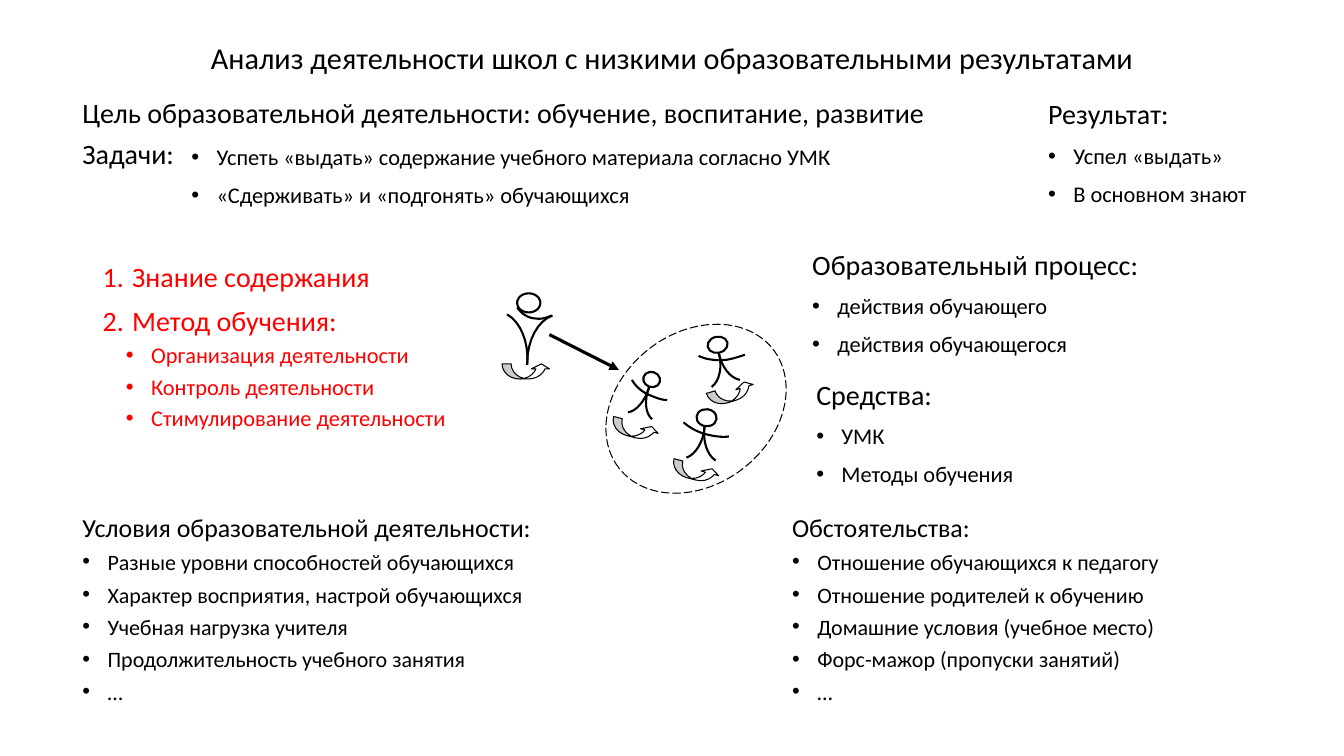
from lxml.etree import SubElement
from pptx import Presentation
from pptx.dml.color import RGBColor
from pptx.enum.dml import MSO_LINE
from pptx.enum.shapes import MSO_CONNECTOR, MSO_SHAPE
from pptx.enum.text import MSO_ANCHOR, MSO_AUTO_SIZE, PP_ALIGN
from pptx.oxml.ns import qn
from pptx.util import Pt

BLACK, WHITE, RED = "000000", "FFFFFF", "FF0000"

# Each figure: head frame and tilt, then arms and legs as Bezier points
FIGURES = [
    ((369.4, 209.5, 16.6, 13.7), 0, [
        [(393.8, 225.4), (391, 226.8), (386.6, 228.2), (383, 227.5),
         (377.3, 227.5), (372.2, 223.9), (369.4, 219.6)],
        [(362.2, 224.6), (371.5, 229.7), (378, 244.1), (376.6, 260.6)],
        [(394.6, 225.4), (384.5, 229), (376.6, 242.6), (376.6, 259.2)]]),
    ((505.4, 240.5, 14.4, 11.5), 347.7, [
        [(532.1, 253.4), (527.8, 254.9), (523.4, 256.3), (519.1, 257),
         (511.9, 257.8), (504.7, 257), (499, 254.2)],
        [(528.5, 271.4), (521.3, 270), (515.5, 262.1), (513.4, 252)],
        [(508.3, 276.5), (514.1, 272.2), (516.2, 262.1), (513.4, 252)]]),
    ((459.4, 265.7, 12.2, 10.8), 18.4, [
        [(476.6, 285.8), (473, 285.8), (469.4, 284.4), (465.8, 283),
         (459.4, 280.8), (454.3, 276.5), (451.4, 271.4)],
        [(465.8, 299.5), (460.8, 295.2), (460.1, 285.8), (463.7, 276.5)],
        [(448.6, 294.5), (454.3, 293.8), (460.8, 286.6), (463.7, 276.5)]]),
    ((497.5, 292.3, 14.4, 12.2), 6.8, [
        [(520.6, 311.8), (516.2, 312.5), (511.9, 311.8), (507.6, 311),
         (499.7, 309.6), (493.2, 306), (488.2, 301.7)],
        [(511.2, 329), (504.7, 324.7), (501.8, 314.6), (503.3, 303.8)],
        [(490.3, 326.9), (496.8, 324.7), (502.6, 315.4), (503.3, 304.6)]]),
]

# Left, top and tilt of the curved arrow at each figure's feet
TURN_ARROWS = [(436.3, 301.7, 14.8), (479.5, 331.9, 14.8),
               (505.4, 275.8, 343.1), (358.6, 259.9, 0)]


def color(value):
    return RGBColor.from_string(value)


def place(shape, left, top, width, height):
    shape.left, shape.top = Pt(left), Pt(top)
    shape.width, shape.height = Pt(width), Pt(height)


def prepare_frame(shape, anchor=MSO_ANCHOR.TOP):
    frame = shape.text_frame
    frame.word_wrap = True
    frame.auto_size = MSO_AUTO_SIZE.NONE
    frame.vertical_anchor = anchor
    return frame


def write(frame, text, *, size=20, fill=BLACK, spacing=0.9, before=10,
          bullet=None, numbered=False, margin=0, hanging=0, level=0,
          align=PP_ALIGN.LEFT):
    """Fill the frame's empty first paragraph, or append a new one."""
    first = not frame.text
    para = frame.paragraphs[0] if first else frame.add_paragraph()
    para.level = level
    para.alignment = align
    para.line_spacing = spacing
    para.space_before = Pt(0 if first else before)
    para.space_after = Pt(0)
    properties = para._p.get_or_add_pPr()
    properties.set("marL", str(Pt(margin)))
    properties.set("indent", str(Pt(-hanging)))
    if numbered:
        SubElement(properties, qn("a:buFont"), typeface="+mj-lt")
        SubElement(properties, qn("a:buAutoNum"), type="arabicPeriod")
    elif bullet:
        SubElement(properties, qn("a:buFont"), typeface="Arial")
        SubElement(properties, qn("a:buChar"), char=bullet)
    else:
        SubElement(properties, qn("a:buNone"))
    span = para.add_run()
    span.text = text
    span.font.name = "Calibri"
    span.font.size = Pt(size)
    span.font.color.rgb = color(fill)


def add_text(page, place_at, heading=None, items=(), *, size=20,
             item_size=16, spacing=0.9):
    box = page.shapes.add_textbox(*map(Pt, place_at))
    frame = prepare_frame(box)
    if heading:
        write(frame, heading, size=size, spacing=spacing)
    for item in items:
        write(frame, item, size=item_size, spacing=spacing,
              bullet="•", margin=18, hanging=18)


def add_outlined(page, kind, place_at, *, tilt=0, width=1.5, fill=WHITE,
                 dash=None):
    shape = page.shapes.add_shape(kind, *map(Pt, place_at))
    shape.shadow.inherit = False
    shape.rotation = tilt
    if fill:
        shape.fill.solid()
        shape.fill.fore_color.rgb = color(fill)
    else:
        shape.fill.background()
    shape.line.color.rgb = color(BLACK)
    shape.line.width = Pt(width)
    if dash:
        shape.line.dash_style = dash
    return shape


def bezier_points(controls, steps=8):
    points = []
    for start in range(0, len(controls) - 1, 3):
        a, b, c, d = controls[start:start + 4]
        for step in range(1, steps + 1):
            t = step / steps
            u = 1 - t
            points.append(tuple(
                Pt(u**3 * a[i] + 3 * u * u * t * b[i]
                   + 3 * u * t * t * c[i] + t**3 * d[i]) for i in (0, 1)))
    return points


def add_curve(page, controls):
    builder = page.shapes.build_freeform(*map(Pt, controls[0]))
    builder.add_line_segments(bezier_points(controls), close=False)
    curve = builder.convert_to_shape()
    curve.shadow.inherit = False
    curve.fill.background()
    curve.line.color.rgb = color(BLACK)
    curve.line.width = Pt(1.5)


def add_figure(page, head, tilt, limbs):
    for limb in limbs:
        add_curve(page, limb)
    add_outlined(page, MSO_SHAPE.OVAL, head, tilt=tilt)


def add_arrow(page, *ends):
    arrow = page.shapes.add_connector(MSO_CONNECTOR.STRAIGHT, *map(Pt, ends))
    arrow.line.color.rgb = color(BLACK)
    arrow.line.width = Pt(2.25)
    SubElement(arrow.line._get_or_add_ln(), qn("a:tailEnd"), type="triangle")
    SubElement(arrow._element.spPr, qn("a:effectLst"))


def main():
    deck = Presentation()
    deck.slide_width, deck.slide_height = Pt(960), Pt(540)
    page = deck.slides.add_slide(deck.slide_layouts[1])

    # Title
    title = page.shapes.title
    place(title, 66.2, 28.8, 828, 28)
    write(prepare_frame(title, MSO_ANCHOR.MIDDLE),
          "Анализ деятельности школ с низкими образовательными результатами",
          size=21.6, align=PP_ALIGN.CENTER)

    # Red list of knowledge and methods
    body = page.placeholders[1]
    place(body, 66.2, 184.3, 285.8, 131.8)
    frame = prepare_frame(body)
    for text in ("Знание содержания", "Метод обучения:"):
        write(frame, text, fill=RED, numbered=True, margin=21, hanging=21)
    for text in ("Организация деятельности", "Контроль деятельности",
                 "Стимулирование деятельности"):
        write(frame, text, size=16, fill=RED, before=5, bullet="•",
              margin=34.6, hanging=18, level=1)

    # Teacher, group of learners and their arrows
    for figure in FIGURES:
        add_figure(page, *figure)
    add_outlined(page, MSO_SHAPE.OVAL, (427.7, 237.6, 139, 108.7),
                 tilt=322.8, width=0.75, fill=None, dash=MSO_LINE.LONG_DASH)
    add_arrow(page, 392.4, 239, 442.1, 264.2)
    for left, top, tilt in TURN_ARROWS:
        arrow = add_outlined(page, MSO_SHAPE.CURVED_UP_ARROW,
                             (left, top, 34.6, 10.8), tilt=tilt, width=0.75)
        for index, value in enumerate((0.6, 1.2, 0.333)):
            arrow.adjustments[index] = value

    # Goal, tasks and result
    add_text(page, (51.8, 69.1, 616.3, 28.8),
             "Цель образовательной деятельности: обучение, воспитание, развитие",
             spacing=0.8)
    add_text(page, (51.8, 96.5, 86.4, 33.1), "Задачи:")
    add_text(page, (129.6, 100.8, 478, 66.2), items=[
        "Успеть «выдать» содержание учебного материала согласно УМК",
        "«Сдерживать» и «подгонять» обучающихся"])
    add_text(page, (741.6, 68.4, 164.9, 87.1), "Результат:",
             ["Успел «выдать»", "В основном знают"])

    # Process and means
    add_text(page, (573.1, 175.7, 293, 95), "Образовательный процесс:",
             ["действия обучающего", "действия обучающегося"])
    add_text(page, (576, 268.6, 293, 87.8), "Средства:",
             ["УМК", "Методы обучения"])

    # Conditions and circumstances
    compact = dict(size=18.5, item_size=15.7, spacing=0.7)
    add_text(page, (51.8, 367.9, 372.2, 145.4),
             "Условия образовательной деятельности:",
             ["Разные уровни способностей обучающихся",
              "Характер восприятия, настрой обучающихся",
              "Учебная нагрузка учителя",
              "Продолжительность учебного занятия", "…"], **compact)
    add_text(page, (558.7, 367.9, 347.8, 145.4), "Обстоятельства:",
             ["Отношение обучающихся к педагогу",
              "Отношение родителей к обучению",
              "Домашние условия (учебное место)",
              "Форс-мажор (пропуски занятий)", "…"], **compact)

    deck.save("out.pptx")


if __name__ == "__main__":
    main()
